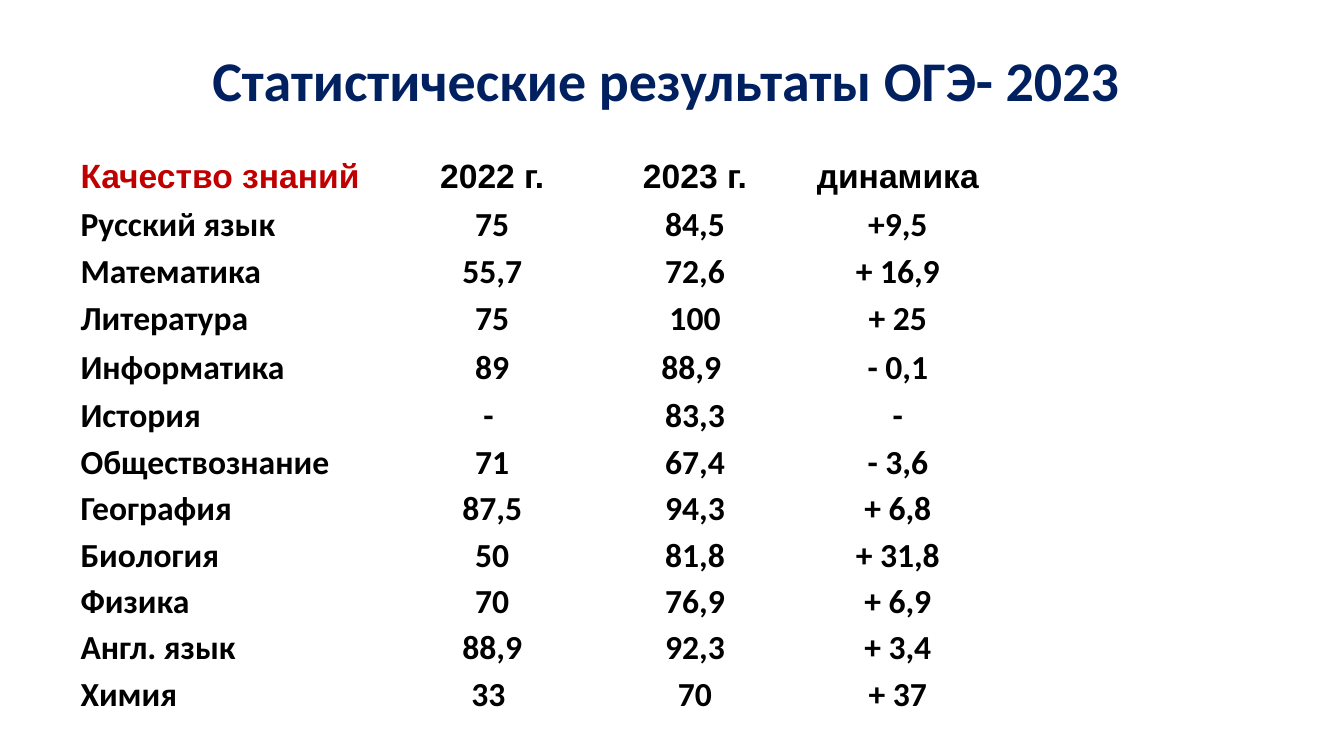
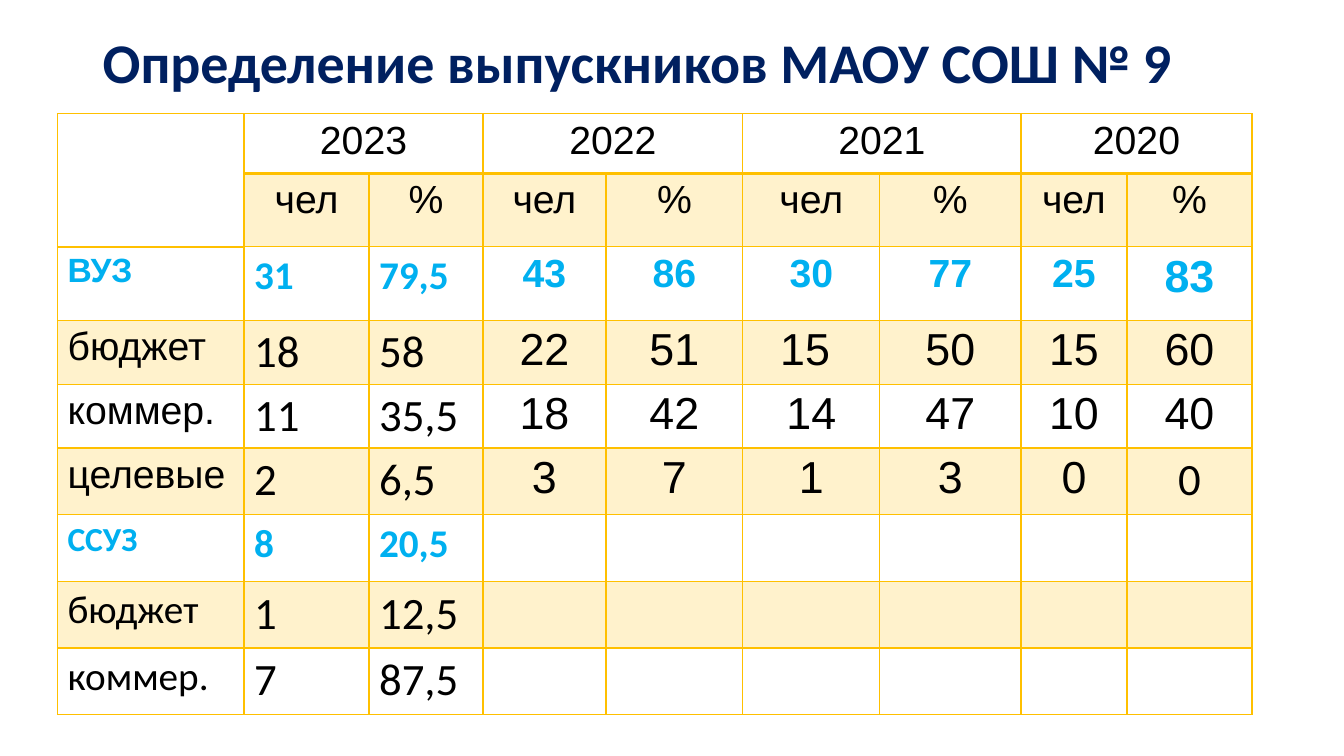
from lxml import etree
from pptx import Presentation
from pptx.dml.color import RGBColor as RGB
from pptx.enum.text import MSO_ANCHOR as ANCHOR, PP_ALIGN as ALIGN
from pptx.oxml.ns import qn
from pptx.util import Cm, Pt

COLORS = {
    "navy": "002060",
    "red": "C00000",
    "sky": "00B0F0",
    "black": "000000",
    "white": "FFFFFF",
    "gold": "FFC000",
    "cream": "FFF2CC",
}


def write(tf, text, font="Calibri", size=24, color="black", bold=False,
          align=ALIGN.LEFT, spacing=1.0):
    p = tf.paragraphs[0]
    p.alignment = align
    p.line_spacing = spacing
    r = p.add_run()
    r.text = text
    r.font.name = font
    r.font.size = Pt(size)
    r.font.bold = bold
    r.font.color.rgb = RGB.from_string(COLORS[color])


class Deck:
    def __init__(self):
        self.prs = Presentation()
        self.prs.slide_width = Cm(33.87)
        self.prs.slide_height = Cm(19.05)
        self.s = None

    def slide(self):
        self.s = self.prs.slides.add_slide(self.prs.slide_layouts[6])

    def title(self, text, left, top, align=ALIGN.LEFT):
        sp = self.s.shapes.add_textbox(Cm(left), Cm(top), Cm(29.2), Cm(2))
        tf = sp.text_frame
        tf.word_wrap = True
        tf.vertical_anchor = ANCHOR.MIDDLE
        write(tf, text, size=40, color="navy", bold=True, align=align)

    def table(self, left, top, widths, heights):
        frame = self.s.shapes.add_table(
            len(heights), len(widths), Cm(left), Cm(top),
            Cm(sum(widths)), Cm(sum(heights)))
        table = frame.table
        table.first_row = table.horz_banding = False
        for col, width in zip(table.columns, widths):
            col.width = Cm(width)
        for row, height in zip(table.rows, heights):
            row.height = Cm(height)
        return table

    def cell(self, cell, line, fill=None, bottom=1):
        tc_pr = cell._tc.get_or_add_tcPr()
        for side, width in (("L", 1), ("R", 1), ("T", 1), ("B", bottom)):
            ln = etree.SubElement(tc_pr, qn(f"a:ln{side}"), w=str(Pt(width)))
            solid = etree.SubElement(ln, qn("a:solidFill"))
            etree.SubElement(solid, qn("a:srgbClr"), val=COLORS[line])
        if fill:
            cell.fill.solid()
            cell.fill.fore_color.rgb = RGB.from_string(COLORS[fill])
        else:
            cell.fill.background()


def exam_results(deck):
    deck.slide()
    deck.title("Статистические результаты ОГЭ- 2023", 2.18, 1, ALIGN.CENTER)
    rows = [
        ("Качество знаний", "2022 г.", "2023 г.", "динамика"),
        ("Русский язык", "75", "84,5", "+9,5"),
        ("Математика", "55,7", "72,6", "+ 16,9"),
        ("Литература", "75", "100", "+ 25"),
        ("Информатика", "89", "88,9 ", "- 0,1"),
        ("История", "- ", "83,3", "-"),
        ("Обществознание", "71", "67,4", "- 3,6"),
        ("География", "87,5", "94,3", "+ 6,8"),
        ("Биология", "50", "81,8", "+ 31,8"),
        ("Физика", "70", "76,9", "+ 6,9"),
        ("Англ. язык", "88,9", "92,3", "+ 3,4"),
        ("Химия", "33 ", "70", "+ 37"),
    ]
    heights = [1.17, 1.17, 1.2, 1.22, 1.22] + [1.17] * 7
    table = deck.table(1.85, 3.84, [8] + [5.11] * 4, heights)
    for i, row in enumerate(rows):
        for j, text in enumerate(row + ("",)):
            cell = table.cell(i, j)
            deck.cell(cell, "white", bottom=1 if i else 3)
            cell.margin_left = cell.margin_right = Cm(0.18)
            cell.margin_top = cell.margin_bottom = 0
            if text:
                write(cell.text_frame, text, bold=True, spacing=1.15,
                      font="Calibri" if i else "Arial",
                      color="red" if i == j == 0 else "black",
                      align=ALIGN.CENTER if j else ALIGN.LEFT)


def graduate_paths(deck):
    deck.slide()
    deck.title("Определение выпускников МАОУ СОШ № 9", 2.34, 0.53)
    rows = [
        ("", "2023", "", "2022", "", "2021", "", "2020", ""),
        ("",) + ("чел", "%") * 4,
        ("ВУЗ", "31", "79,5", "43", "86", "30", "77", "25", "83"),
        ("бюджет", "18", "58", "22", "51", "15 ", "50", "15", "60"),
        ("коммер.", "11", "35,5", "18", "42", "14", "47", "10", "40"),
        ("целевые", "2", "6,5", "3", "7", "1", "3", "0", "0"),
        ("ССУЗ", "8", "20,5"),
        ("бюджет", "1", "12,5"),
        ("коммер.", "7", "87,5"),
    ]
    header_rows, totals, college = 2, (2, 6), 6
    special = {(2, 8): {"size": 32}, (5, 8): {"font": "Calibri"}}
    widths = [4.7, 3.15, 2.87, 3.1, 3.45, 3.45, 3.56, 2.67, 3.15]
    heights = [1.5, 1.85, 1.85, 1.57, 1.47] + [1.68] * 4
    table = deck.table(1.45, 2.87, widths, heights)
    for i, row in enumerate(rows):
        for j in range(len(widths)):
            deck.cell(table.cell(i, j), "gold", "cream" if i % 2 else None,
                      bottom=1 if i else 2)
        for j, text in enumerate(row):
            if not text:
                continue
            header, total = i < header_rows, i in totals
            calibri = not header and (j in (1, 2) or i >= college)
            size = 28 if header or total or j == 0 else 32
            style = {
                "font": "Calibri" if calibri else "Arial",
                "size": 24 if total and j == 0 else size,
                "color": "sky" if total else "black",
                "bold": total,
                "align": ALIGN.CENTER if header or j > 2 else ALIGN.LEFT,
            }
            style.update(special.get((i, j), {}))
            write(table.cell(i, j).text_frame, text, **style)
    table.cell(0, 0).merge(table.cell(1, 0))
    for j in range(1, len(widths), 2):
        table.cell(0, j).merge(table.cell(0, j + 1))


def main():
    deck = Deck()
    exam_results(deck)
    graduate_paths(deck)
    deck.prs.save("out.pptx")


if __name__ == "__main__":
    main()
